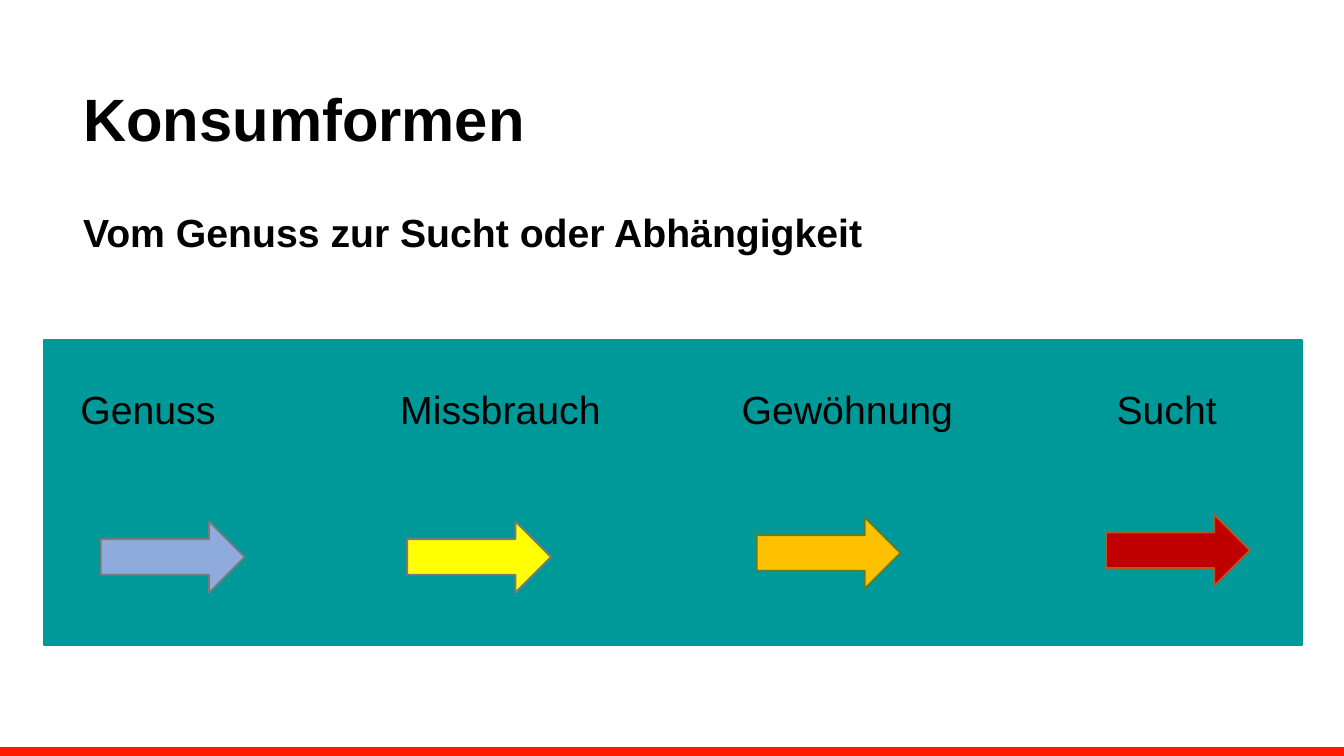
from dataclasses import dataclass

from lxml.etree import SubElement
from pptx import Presentation
from pptx.dml.color import RGBColor
from pptx.enum.shapes import MSO_SHAPE
from pptx.enum.text import MSO_ANCHOR, PP_ALIGN
from pptx.oxml.ns import qn
from pptx.util import Inches, Pt


@dataclass(frozen=True)
class Theme:
    font: str = "Arial"
    title_size: int = 32
    text_size: int = 21
    text: str = "000000"
    background: str = "FFFFFF"
    footer: str = "FF1900"
    panel: str = "009999"


THEME = Theme()

# Widescreen slide, 16:9
SLIDE_WIDTH = 10
SLIDE_HEIGHT = SLIDE_WIDTH * 9 / 16

# Label, arrow left and top within the panel, arrow fill, arrow outline
STAGES = [
    ("Genuss", 0.42, 1.35, "8FAADC", "7A7A7A"),
    ("Missbrauch", 2.70, 1.35, "FFFF00", "7A7A7A"),
    ("Gewöhnung", 5.30, 1.32, "FFC000", "538035"),
    ("Sucht", 7.90, 1.30, "C00000", "AF5C24"),
]
LABEL_TABS = [2.38, 4.92, 7.71]
ARROW_SIZE = (1.07, 0.53)


def add_filled_shape(slide, kind, box, fill, line=None):
    shape = slide.shapes.add_shape(kind, *map(Inches, box))
    shape.shadow.inherit = False
    shape.fill.solid()
    shape.fill.fore_color.rgb = RGBColor.from_string(fill)
    if line:
        shape.line.color.rgb = RGBColor.from_string(line)
        shape.line.width = Pt(1)
    else:
        shape.line.fill.background()
    return shape


def write_text(paragraph, text, size, bold=False):
    paragraph.alignment = PP_ALIGN.LEFT
    run = paragraph.add_run()
    run.text = text
    run.font.name = THEME.font
    run.font.size = Pt(size)
    run.font.bold = bold
    run.font.color.rgb = RGBColor.from_string(THEME.text)


def add_text_box(slide, box):
    frame = slide.shapes.add_textbox(*map(Inches, box)).text_frame
    frame.word_wrap = True
    return frame


def add_tab_stops(paragraph, positions):
    tabs = SubElement(paragraph._p.get_or_add_pPr(), qn("a:tabLst"))
    for position in positions:
        SubElement(tabs, qn("a:tab"), pos=str(Inches(position)), algn="l")


def add_heading(slide, box):
    left, top, width, height = box
    title = slide.shapes.title
    title.left, title.top = Inches(left), Inches(top)
    title.width, title.height = Inches(width), Inches(height)
    title.text_frame.vertical_anchor = MSO_ANCHOR.MIDDLE
    paragraph = title.text_frame.paragraphs[0]
    paragraph.line_spacing = 1.1
    write_text(paragraph, "Konsumformen", THEME.title_size, bold=True)


def add_subheading(slide, box):
    frame = add_text_box(slide, box)
    write_text(frame.paragraphs[0], "Vom Genuss zur Sucht oder Abhängigkeit",
               THEME.text_size, bold=True)


def add_stage_panel(slide, box):
    left, top, width, height = box
    add_filled_shape(slide, MSO_SHAPE.RECTANGLE, box, THEME.panel, THEME.panel)

    # Stage names share one line, set apart by tab stops
    frame = add_text_box(slide, (left + 0.17, top - 0.23, 9, 2.99))
    frame.margin_top = Inches(0.57)
    paragraph = frame.paragraphs[0]
    add_tab_stops(paragraph, LABEL_TABS)
    write_text(paragraph, "\t".join(stage[0] for stage in STAGES), THEME.text_size)

    # One arrow below each stage name
    for _, arrow_left, arrow_top, fill, line in STAGES:
        arrow_box = (left + arrow_left, top + arrow_top, *ARROW_SIZE)
        add_filled_shape(slide, MSO_SHAPE.RIGHT_ARROW, arrow_box, fill, line)


def main():
    presentation = Presentation()
    presentation.slide_width = Inches(SLIDE_WIDTH)
    presentation.slide_height = Inches(SLIDE_HEIGHT)
    slide = presentation.slides.add_slide(presentation.slide_layouts[5])
    slide.background.fill.solid()
    slide.background.fill.fore_color.rgb = RGBColor.from_string(THEME.background)

    add_filled_shape(slide, MSO_SHAPE.RECTANGLE, (0, 5.56, SLIDE_WIDTH, 0.07),
                     THEME.footer)
    add_heading(slide, (0.52, 0.3, 6.41, 1.09))
    add_stage_panel(slide, (0.33, 2.53, 9.36, 2.27))
    add_subheading(slide, (0.52, 1.5, 8.97, 3.5))
    presentation.save("out.pptx")


if __name__ == "__main__":
    main()
